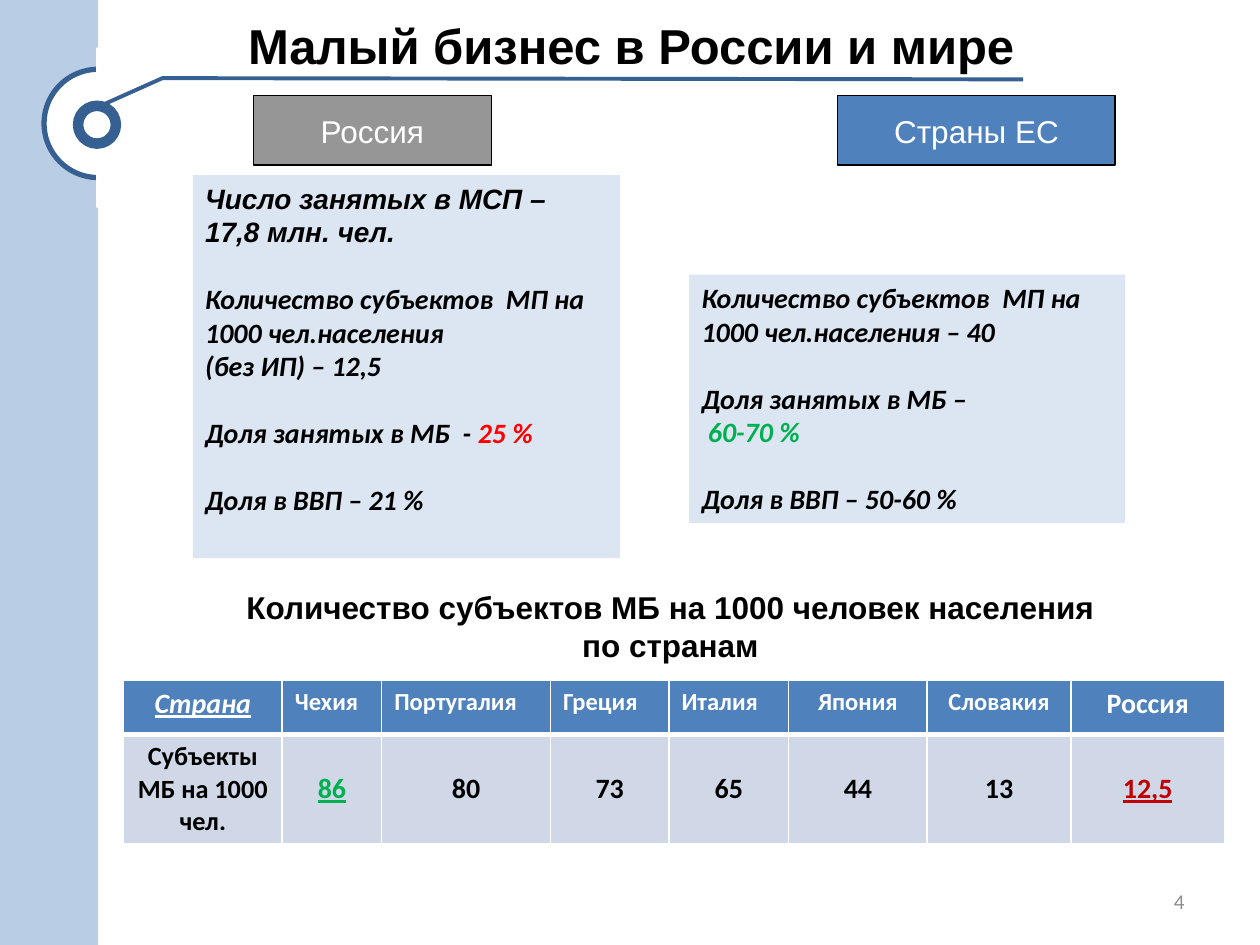
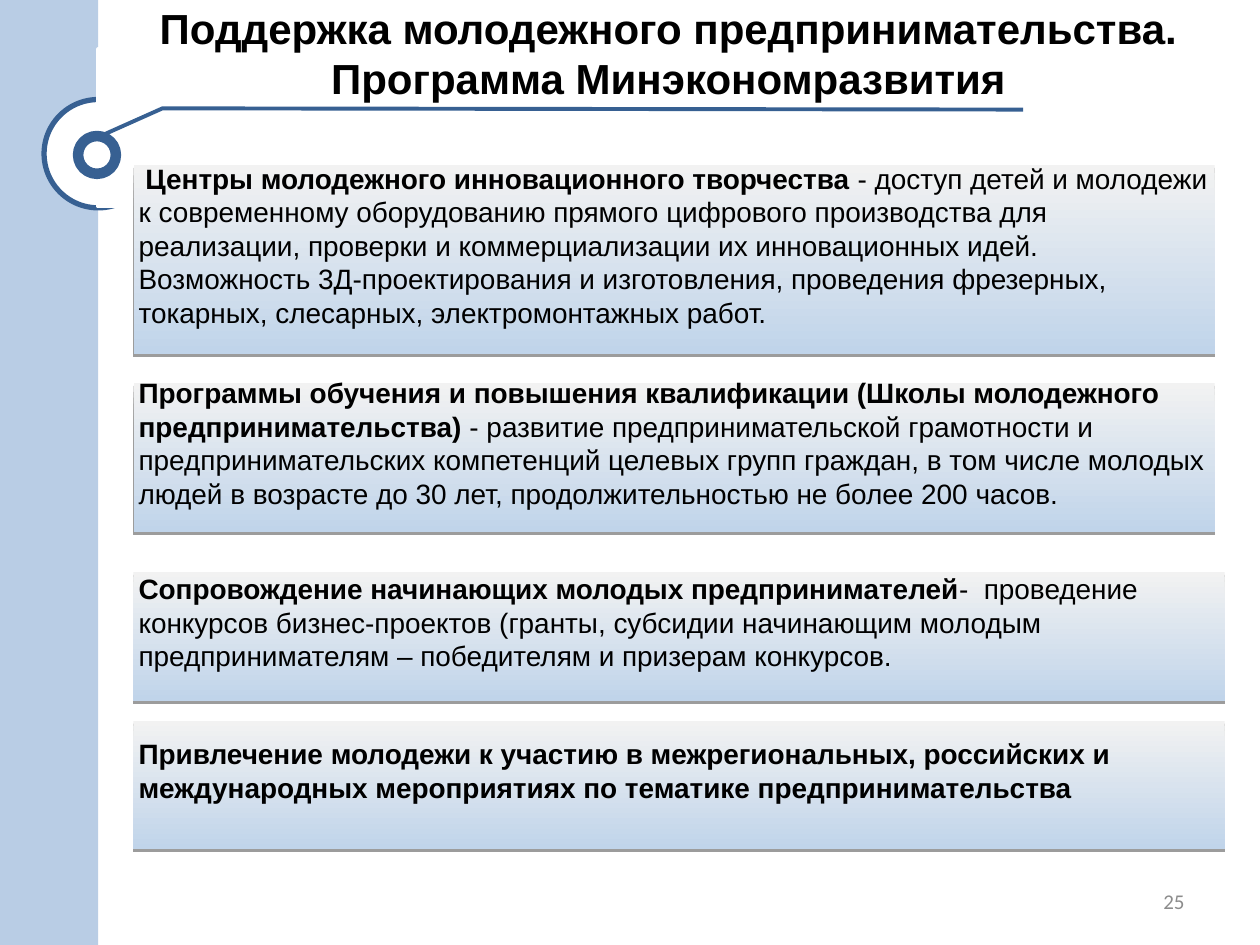
from lxml.etree import SubElement
from pptx import Presentation
from pptx.dml.color import RGBColor
from pptx.enum.shapes import MSO_SHAPE as Shape
from pptx.enum.text import MSO_ANCHOR as Anchor, MSO_AUTO_SIZE as AutoSize, PP_ALIGN as Align
from pptx.oxml.ns import qn
from pptx.util import Pt

PX = 9144
TITLE_ONLY = 5
BLACK, WHITE, GRAY = "000000", "FFFFFF", "8C8C8C"
BAND, NAVY, BLUE, SILVER = "B9CDE5", "376092", "4F81BD", "969696"
PANEL, CELL = "DCE6F2", "D0D8E8"
GREEN, RED, DARK_RED = "00B050", "FF0000", "C00000"
CARD_TOP, CARD_BOTTOM = "F2F2F2", "C0D4EA"
BLANK_LINE = 19

RUSSIA_FACTS = [
    (0, ["Количество субъектов  МП на 1000 чел.населения"]),
    (0, ["(без ИП) – 12,5"]),
    (BLANK_LINE, ["Доля занятых в МБ  - ", ("25 %", {"color": RED})]),
    (BLANK_LINE, ["Доля в ВВП – 21 %"]),
]
EU_FACTS = [
    (0, ["Количество субъектов  МП на 1000 чел.населения – 40"]),
    (BLANK_LINE, ["Доля занятых в МБ –"]),
    (0, [" ", ("60-70 %", {"color": GREEN})]),
    (BLANK_LINE, ["Доля в ВВП – 50-60 %"]),
]

COUNTRIES = [
    ("Чехия", "86", 79, Align.LEFT),
    ("Португалия", "80", 134, Align.LEFT),
    ("Греция", "73", 94, Align.LEFT),
    ("Италия", "65", 95, Align.LEFT),
    ("Япония", "44", 110, Align.CENTER),
    ("Словакия", "13", 114, Align.CENTER),
    ("Россия", "12,5", 122, Align.CENTER),
]
HEADER_FORMATS = {"Россия": {"size": 16}}
VALUE_FORMATS = {
    "Чехия": {"color": GREEN, "underline": True},
    "Россия": {"color": DARK_RED, "underline": True},
}

BOLD = {"bold": True}
MEASURES = [
    (131, 858, 150, [
        [(" ", {"size": 14}),
         ("Центры молодежного инновационного творчества ", BOLD),
         "- доступ детей и молодежи к современному оборудованию прямого цифрового "
         "производства для реализации, проверки и коммерциализации их инновационных идей."],
        ["Возможность 3Д-проектирования и изготовления, проведения фрезерных, "
         "токарных, слесарных, электромонтажных работ."],
    ]),
    (304, 858, 118, [
        [("Программы обучения и повышения квалификации "
          "(Школы молодежного предпринимательства) ", BOLD),
         "- развитие предпринимательской грамотности и предпринимательских компетенций "
         "целевых групп граждан, в том числе молодых людей в возрасте до 30 лет, "
         "продолжительностью не более 200 часов."],
    ]),
    (454, 866, 102, [
        [("Сопровождение начинающих молодых предпринимателей", BOLD),
         "-  проведение конкурсов бизнес-проектов (гранты, субсидии начинающим молодым "
         "предпринимателям – победителям и призерам конкурсов."],
    ]),
    (572, 866, 102, [
        [("Привлечение молодежи к участию в межрегиональных, российских и "
          "международных мероприятиях по тематике предпринимательства", BOLD)],
    ]),
]


def px(*lengths):
    return [length * PX for length in lengths]


def rgb(color):
    return RGBColor.from_string(color)


def add_span(para, text, size=16, font="Arial", color=BLACK, bold=False, italic=False,
             underline=False):
    span = para.add_run()
    span.text = text
    style = span.font
    style.size, style.name = Pt(size), font
    style.bold, style.italic, style.underline = bold, italic, underline
    style.color.rgb = rgb(color)


def add_para(frame, spans, align=Align.LEFT, gap=0, **format):
    last = frame.paragraphs[-1]
    para = frame.add_paragraph() if last.runs else last
    para.alignment = align
    para.space_before = Pt(gap)
    for span in spans:
        text, changes = (span, {}) if isinstance(span, str) else span
        add_span(para, text, **{**format, **changes})


def set_frame(frame, anchor, wrap=True):
    frame.auto_size = AutoSize.NONE
    frame.word_wrap = wrap
    frame.vertical_anchor = anchor
    return frame


def add_box(shapes, kind, bounds, fill=None, line=None, width=1):
    box = shapes.add_shape(kind, *px(*bounds))
    box.shadow.inherit = False
    if fill:
        box.fill.solid()
        box.fill.fore_color.rgb = rgb(fill)
    set_line(box, line, width)
    return box


def set_line(box, color, width):
    if color:
        box.line.color.rgb = rgb(color)
        box.line.width = Pt(width)
    else:
        box.line.fill.background()


def add_text_box(page, bounds, anchor=Anchor.TOP):
    return set_frame(page.shapes.add_textbox(*px(*bounds)).text_frame, anchor)


def add_ornament(page, top):
    shapes = page.shapes.add_group_shape().shapes
    add_box(shapes, Shape.RECTANGLE, (0, 0, 78, 750), BAND)
    add_box(shapes, Shape.OVAL, (35, top, 86, 86), WHITE, NAVY, 3)
    add_box(shapes, Shape.RECTANGLE, (78, 39, 66, 125), WHITE, WHITE, 2)
    add_box(shapes, Shape.OVAL, (62, top + 29, 30, 30), WHITE, NAVY, 6)
    builder = shapes.build_freeform(82, top + 28, scale=PX)
    builder.add_line_segments([(129, top + 7), (812, top + 8)], close=False)
    rule = builder.convert_to_shape()
    rule.shadow.inherit = False
    rule.fill.background()
    set_line(rule, NAVY, 2.25)


def add_page(deck, title, bounds, size, anchor, ornament_top, number):
    page = deck.slides.add_slide(deck.slide_layouts[TITLE_ONLY])
    add_ornament(page, ornament_top)
    heading = page.shapes.title
    heading.left, heading.top, heading.width, heading.height = px(*bounds)
    heading.element.getparent().append(heading.element)
    add_para(set_frame(heading.text_frame, anchor), [title], Align.CENTER, size=size, bold=True)
    add_para(add_text_box(page, (717, 695, 233, 40), Anchor.MIDDLE), [number], Align.RIGHT,
             size=12, font="Calibri", color=GRAY)
    return page


def add_label(page, text, bounds, fill):
    box = add_box(page.shapes, Shape.RECTANGLE, bounds, fill, BLACK, 0.75)
    add_para(set_frame(box.text_frame, Anchor.MIDDLE, wrap=False), [text], Align.CENTER,
             size=18, color=WHITE)


def add_panel(page, bounds):
    box = add_box(page.shapes, Shape.RECTANGLE, bounds, PANEL)
    return set_frame(box.text_frame, Anchor.TOP)


def add_facts(frame, facts, first_gap=0):
    for index, (gap, spans) in enumerate(facts):
        add_para(frame, spans, gap=gap if index else first_gap,
                 font="Calibri", bold=True, italic=True)


def set_borders(cell, **widths):
    properties = cell._tc.get_or_add_tcPr()
    for side in "LRTB":
        line = SubElement(properties, qn(f"a:ln{side}"), w=str(Pt(widths.get(side, 1))))
        SubElement(SubElement(line, qn("a:solidFill")), qn("a:srgbClr"), val=WHITE)


def fill_cell(cell, text, fill, anchor, borders, align=Align.CENTER, **format):
    set_borders(cell, **borders)
    cell.fill.solid()
    cell.fill.fore_color.rgb = rgb(fill)
    cell.vertical_anchor = anchor
    add_para(cell.text_frame, [text], align, **{"font": "Calibri", "bold": True, **format})


def add_country_table(page):
    table = page.shapes.add_table(2, len(COUNTRIES) + 1, *px(98, 540, 874, 128)).table
    table.horz_banding = False
    table.rows[0].height, table.rows[1].height = px(43, 85)
    widths = [126] + [width for _, _, width, _ in COUNTRIES]
    for column, width in zip(table.columns, widths):
        column.width = width * PX
    header = {"fill": BLUE, "anchor": Anchor.TOP, "borders": {"B": 3}, "color": WHITE}
    body = {"fill": CELL, "borders": {"T": 3}}
    fill_cell(table.cell(0, 0), "Страна", italic=True, underline=True, **header)
    fill_cell(table.cell(1, 0), "Субъекты МБ на 1000 чел.", anchor=Anchor.TOP, size=15, **body)
    for index, (country, value, _, align) in enumerate(COUNTRIES, 1):
        fill_cell(table.cell(0, index), country, align=align,
                  **{"size": 14, **header, **HEADER_FORMATS.get(country, {})})
        fill_cell(table.cell(1, index), value, anchor=Anchor.MIDDLE,
                  **body, **VALUE_FORMATS.get(country, {}))


def add_card_shadow(card):
    effects = card.element.spPr.find(qn("a:effectLst"))
    shadow = SubElement(effects, qn("a:outerShdw"), blurRad="0", dist=str(Pt(1.6)),
                        dir="5400000", rotWithShape="0")
    color = SubElement(shadow, qn("a:srgbClr"), val=BLACK)
    SubElement(color, qn("a:alpha"), val="38000")


def add_card(page, top, width, height, paras):
    card = add_box(page.shapes, Shape.RECTANGLE, (106, top, width, height))
    card.fill.gradient()
    card.fill.gradient_angle = 270
    for stop, position, color in zip(card.fill.gradient_stops, (0, 1), (CARD_TOP, CARD_BOTTOM)):
        stop.position = position
        stop.color.rgb = rgb(color)
    add_card_shadow(card)
    frame = set_frame(card.text_frame, Anchor.MIDDLE)
    frame.margin_left, frame.margin_top, frame.margin_right, frame.margin_bottom = px(4, 4, 4, 27)
    for spans in paras:
        add_para(frame, spans)


def add_comparison_page(deck):
    page = add_page(deck, "Малый бизнес в России и мире", (51, 0, 900, 71), 28,
                    Anchor.MIDDLE, 55, "4")
    add_label(page, "Россия", (201, 76, 189, 55), SILVER)
    add_label(page, "Страны ЕС", (665, 76, 220, 55), BLUE)
    add_facts(add_panel(page, (547, 218, 346, 197)), EU_FACTS)
    russia = add_panel(page, (153, 139, 339, 304))
    add_para(russia, ["Число занятых в МСП – 17,8 млн. чел."], bold=True, italic=True)
    add_facts(russia, RUSSIA_FACTS, first_gap=BLANK_LINE)
    caption = add_text_box(page, (130, 462, 811, 71))
    for text in ("Количество субъектов МБ на 1000 человек населения ", "по странам "):
        add_para(caption, [text], Align.CENTER, size=18, bold=True)
    add_country_table(page)


def add_support_page(deck):
    page = add_page(deck, "Поддержка молодежного предпринимательства. Программа Минэкономразвития",
                    (106, -3, 849, 91), 24, Anchor.TOP, 79, "25")
    for measure in MEASURES:
        add_card(page, *measure)


def main():
    deck = Presentation()
    deck.slide_width, deck.slide_height = px(1000, 750)
    add_comparison_page(deck)
    add_support_page(deck)
    deck.save("out.pptx")


if __name__ == "__main__":
    main()
